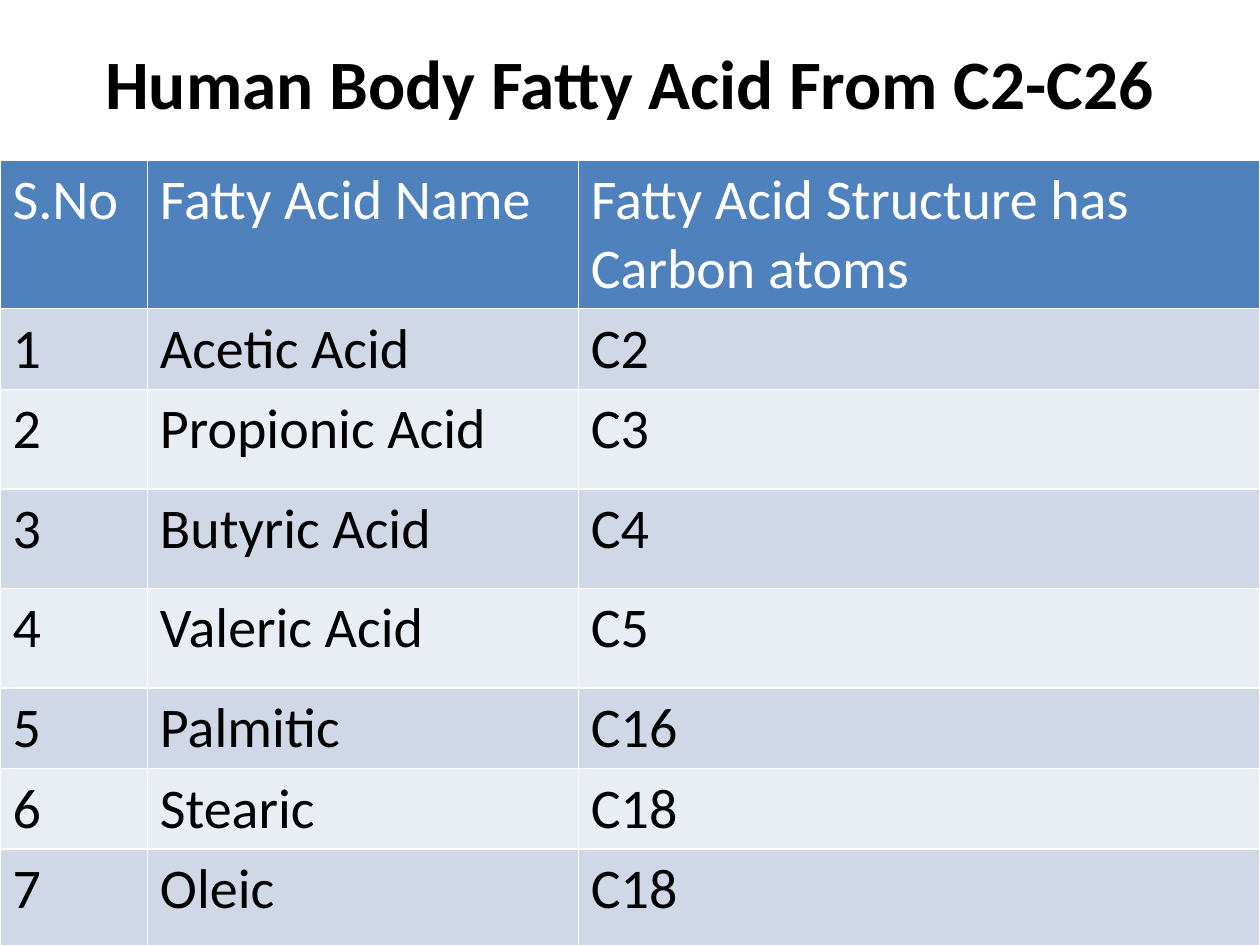
from pptx import Presentation
from pptx.dml.color import RGBColor
from pptx.enum.text import MSO_ANCHOR, PP_ALIGN
from pptx.util import Inches, Pt

CENTER, LEFT = PP_ALIGN.CENTER, PP_ALIGN.LEFT
MIDDLE, TOP = MSO_ANCHOR.MIDDLE, MSO_ANCHOR.TOP

FONT = "Calibri"
BLACK, WHITE = "000000", "FFFFFF"
HEADER_FILL = "4F81BD"
BAND_FILLS = ["E9EDF4", "D0D8E8"]

COLUMN_WIDTHS = [1.17, 3.42, 5.41]
ROW_HEIGHTS = [1.18, 0.64, 0.79, 0.79, 0.79, 0.64, 0.64, 0.79]
HEADER = ["S.No", "Fatty Acid Name", "Fatty Acid Structure has Carbon atoms"]
FATTY_ACIDS = [
    ("Acetic Acid", "C2"),
    ("Propionic Acid", "C3"),
    ("Butyric Acid", "C4"),
    ("Valeric Acid", "C5"),
    ("Palmitic", "C16"),
    ("Stearic", "C18"),
    ("Oleic", "C18"),
]


def color(hex_string):
    return RGBColor.from_string(hex_string)


def write_text(text_frame, text, *, size, font_color=BLACK, bold=False,
               align=LEFT, anchor=TOP):
    text_frame.word_wrap = True
    text_frame.vertical_anchor = anchor
    paragraph = text_frame.paragraphs[0]
    paragraph.alignment = align
    run = paragraph.add_run()
    run.text = text
    run.font.name = FONT
    run.font.size = Pt(size)
    run.font.bold = bold
    run.font.color.rgb = color(font_color)


presentation = Presentation()
presentation.slide_width = Inches(10)
presentation.slide_height = Inches(7.5)
slide = presentation.slides.add_slide(presentation.slide_layouts[6])
slide.background.fill.solid()
slide.background.fill.fore_color.rgb = color(WHITE)

title = slide.shapes.add_textbox(Inches(0.5), Inches(0.02), Inches(9), Inches(1.25))
write_text(title.text_frame, "Human Body Fatty Acid From C2-C26",
           size=39.6, bold=True, align=CENTER, anchor=MIDDLE)

rows = [HEADER]
for number, (name, carbons) in enumerate(FATTY_ACIDS, start=1):
    rows.append([str(number), name, carbons])

# The default table style supplies the white cell borders.
table = slide.shapes.add_table(
    len(rows), len(HEADER), Inches(0), Inches(1.27),
    Inches(sum(COLUMN_WIDTHS)), Inches(sum(ROW_HEIGHTS))).table
for column, width in zip(table.columns, COLUMN_WIDTHS):
    column.width = Inches(width)

for row_index, (values, height) in enumerate(zip(rows, ROW_HEIGHTS)):
    table.rows[row_index].height = Inches(height)
    is_header = row_index == 0
    fill = HEADER_FILL if is_header else BAND_FILLS[row_index % 2]
    for column_index, value in enumerate(values):
        cell = table.cell(row_index, column_index)
        cell.fill.solid()
        cell.fill.fore_color.rgb = color(fill)
        write_text(cell.text_frame, value, size=32,
                   font_color=WHITE if is_header else BLACK)

presentation.save("out.pptx")
